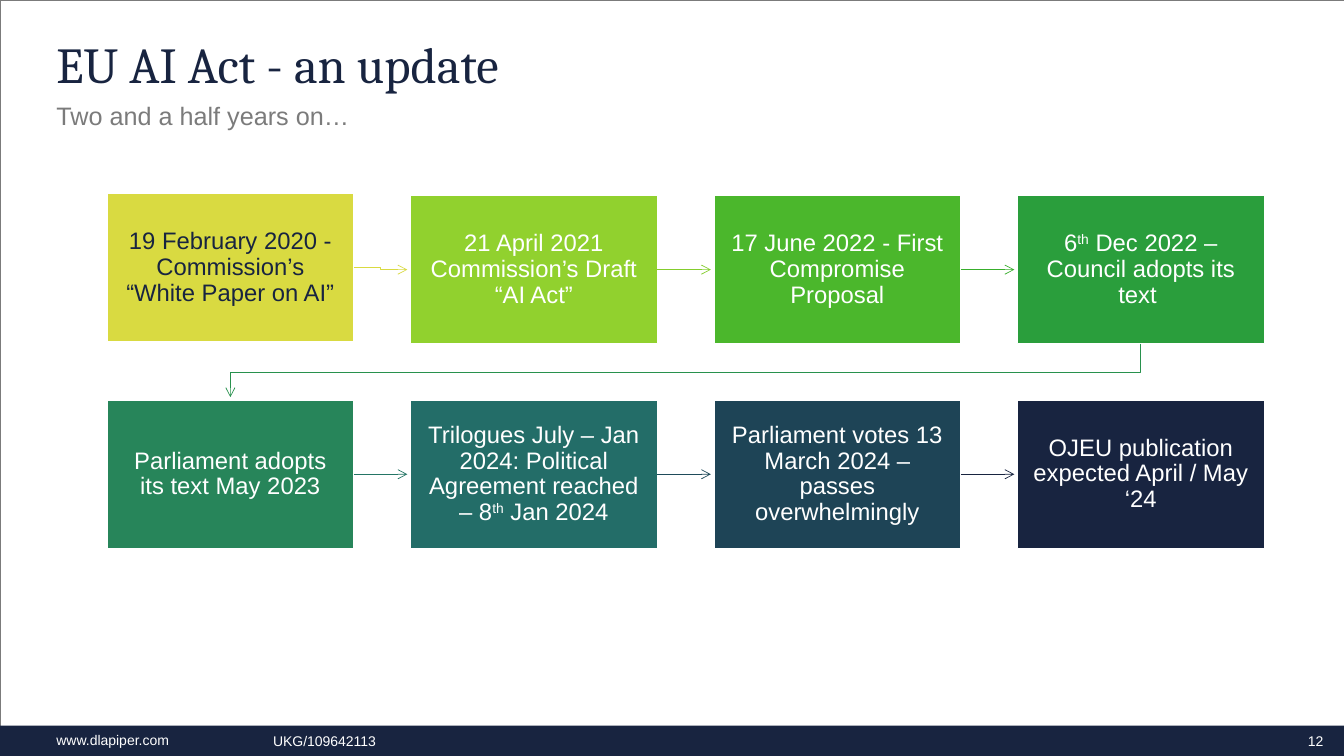
from lxml import etree
from pptx import Presentation
from pptx.dml.color import RGBColor
from pptx.enum import shapes, text
from pptx.oxml import ns
from pptx.util import Inches, Pt

COLORS = {"navy": "182440", "grey": "7B7B7B", "white": "FFFFFF"}
LEFT, PITCH = 1.06, 3.01
BOX_W, BOX_H = 2.45, 1.47
ROW_TOPS = (1.94, 3.97)
FIRST_TOP = 1.92
ARROW_GAP = 0.03

MILESTONES = [
    ("19 February 2020 - Commission’s “White Paper on AI”", "D9DA41", "D9DA41"),
    ("21 April 2021 Commission’s Draft “AI Act”", "91D12E", "84CD2D"),
    ("17 June 2022 - First Compromise Proposal", "4BB72C", "38AE2C"),
    ("6^th^ Dec 2022 – Council adopts its text ", "2A9E3C", "28914D"),
    ("Parliament adopts its text May 2023", "27855A", "247565"),
    ("Trilogues July – Jan 2024: Political Agreement reached – 8^th^ Jan 2024",
     "236D68", "1F4B5A"),
    ("Parliament votes 13 March 2024 – passes overwhelmingly", "1E4456", "182440"),
    ("OJEU publication expected April / May ‘24", "182440", None),
]


def rgb(color):
    return RGBColor.from_string(COLORS.get(color, color))


def set_frame(frame, margins, anchor):
    frame.word_wrap = True
    frame.vertical_anchor = anchor
    (frame.margin_left, frame.margin_top,
     frame.margin_right, frame.margin_bottom) = [Inches(m) for m in margins]


def style_runs(paragraph, size, color, font="Arial"):
    for run in paragraph.runs:
        run.font.size = Pt(size)
        run.font.name = font
        run.font.color.rgb = rgb(color)


def add_label(slide, words, place, size, color, font="Arial", margins=(0, 0, 0, 0),
              anchor=text.MSO_ANCHOR.TOP, align=text.PP_ALIGN.LEFT, spacing=None):
    frame = slide.shapes.add_textbox(*[Inches(n) for n in place]).text_frame
    set_frame(frame, margins, anchor)
    frame.text = words
    paragraph = frame.paragraphs[0]
    paragraph.alignment = align
    paragraph.line_spacing = spacing
    style_runs(paragraph, size, color, font)


def add_rectangle(slide, place, fill=None, line=None, width=1):
    rectangle = slide.shapes.add_shape(
        shapes.MSO_SHAPE.RECTANGLE, *[Inches(n) for n in place])
    rectangle.shadow.inherit = False
    for part, color in ((rectangle.fill, fill), (rectangle.line.fill, line)):
        if color:
            part.solid()
            part.fore_color.rgb = rgb(color)
        else:
            part.background()
    if line:
        rectangle.line.width = Pt(width)
    return rectangle


def add_milestone(slide, left, top, words, fill, color):
    milestone = add_rectangle(slide, (left, top, BOX_W, BOX_H), fill, "white")
    frame = milestone.text_frame
    set_frame(frame, (0.13,) * 4, text.MSO_ANCHOR.MIDDLE)
    paragraph = frame.paragraphs[0]
    paragraph.alignment = text.PP_ALIGN.CENTER
    paragraph.line_spacing = 0.9
    for index, part in enumerate(words.split("^")):
        run = paragraph.add_run()
        run.text = part
        if index % 2:
            run.font._element.set("baseline", "30000")
    style_runs(paragraph, 17, color)
    return milestone


def style_arrow(arrow, color):
    arrow.line.color.rgb = rgb(color)
    arrow.line.width = Pt(0.5)
    etree.SubElement(arrow.line._get_or_add_ln(), ns.qn("a:tailEnd"), type="arrow")


def add_straight_arrow(slide, source, end_x, y, color):
    arrow = slide.shapes.add_connector(
        shapes.MSO_CONNECTOR.STRAIGHT, source.left + source.width, Inches(y),
        Inches(end_x), Inches(y))
    arrow.begin_connect(source, 3)
    style_arrow(arrow, color)
    etree.SubElement(arrow._element.spPr, ns.qn("a:effectLst"))


def add_bent_arrow(slide, points, color):
    start, *rest = [(Inches(x), Inches(y)) for x, y in points]
    builder = slide.shapes.build_freeform(*start)
    builder.add_line_segments(rest, close=False)
    arrow = builder.convert_to_shape()
    arrow.shadow.inherit = False
    arrow.fill.background()
    style_arrow(arrow, color)


def add_timeline(slide):
    for index, (words, fill, arrow_color) in enumerate(MILESTONES):
        row, column = divmod(index, 4)
        left = LEFT + column * PITCH
        top = ROW_TOPS[row] if index else FIRST_TOP
        milestone = add_milestone(slide, left, top, words, fill,
                                  "white" if index else "navy")
        right, middle = left + BOX_W, ROW_TOPS[row] + BOX_H / 2
        arrow_end = left + PITCH - ARROW_GAP
        if index == 0:
            bend, start_y = (right + arrow_end) / 2, top + BOX_H / 2
            add_bent_arrow(slide, [(right, start_y), (bend, start_y),
                                   (bend, middle), (arrow_end, middle)], arrow_color)
        elif column < 3:
            add_straight_arrow(slide, milestone, arrow_end, middle, arrow_color)
        elif arrow_color:
            start_x, end_x = left + BOX_W / 2, LEFT + BOX_W / 2
            bottom, next_top = top + BOX_H, ROW_TOPS[1]
            turn = (bottom + next_top) / 2
            add_bent_arrow(slide, [(start_x, bottom), (start_x, turn), (end_x, turn),
                                   (end_x, next_top - ARROW_GAP)], arrow_color)


def add_footer(slide):
    add_rectangle(slide, (0, 7.2, 13.33, 0.3), "navy")
    add_label(slide, "www.dlapiper.com", (0.56, 7.21, 1.89, 0.27), 10, "white",
              margins=(0, 0.05, 0.1, 0.05))
    add_label(slide, "UKG/109642113", (2.61, 7.21, 8.11, 0.28), 10, "white",
              margins=(0.1, 0.05, 0.1, 0.05), anchor=text.MSO_ANCHOR.MIDDLE)
    add_label(slide, "12", (12.77, 7.2, 0.56, 0.3), 10, "white",
              anchor=text.MSO_ANCHOR.MIDDLE, align=text.PP_ALIGN.CENTER)


def main():
    deck = Presentation()
    deck.slide_width, deck.slide_height = Inches(13.33), Inches(7.5)
    slide = deck.slides.add_slide(deck.slide_layouts[6])
    add_rectangle(slide, (0, 0, 13.33, 7.5), line="grey", width=0.15)
    add_footer(slide)
    add_label(slide, "Two and a half years on…", (0.56, 1, 12.2, 0.26), 18, "grey")
    add_label(slide, "EU AI Act - an update", (0.56, 0.4, 12.2, 0.63), 36, "navy",
              font="Cambria", spacing=0.9)
    add_timeline(slide)
    deck.save("out.pptx")


if __name__ == "__main__":
    main()
